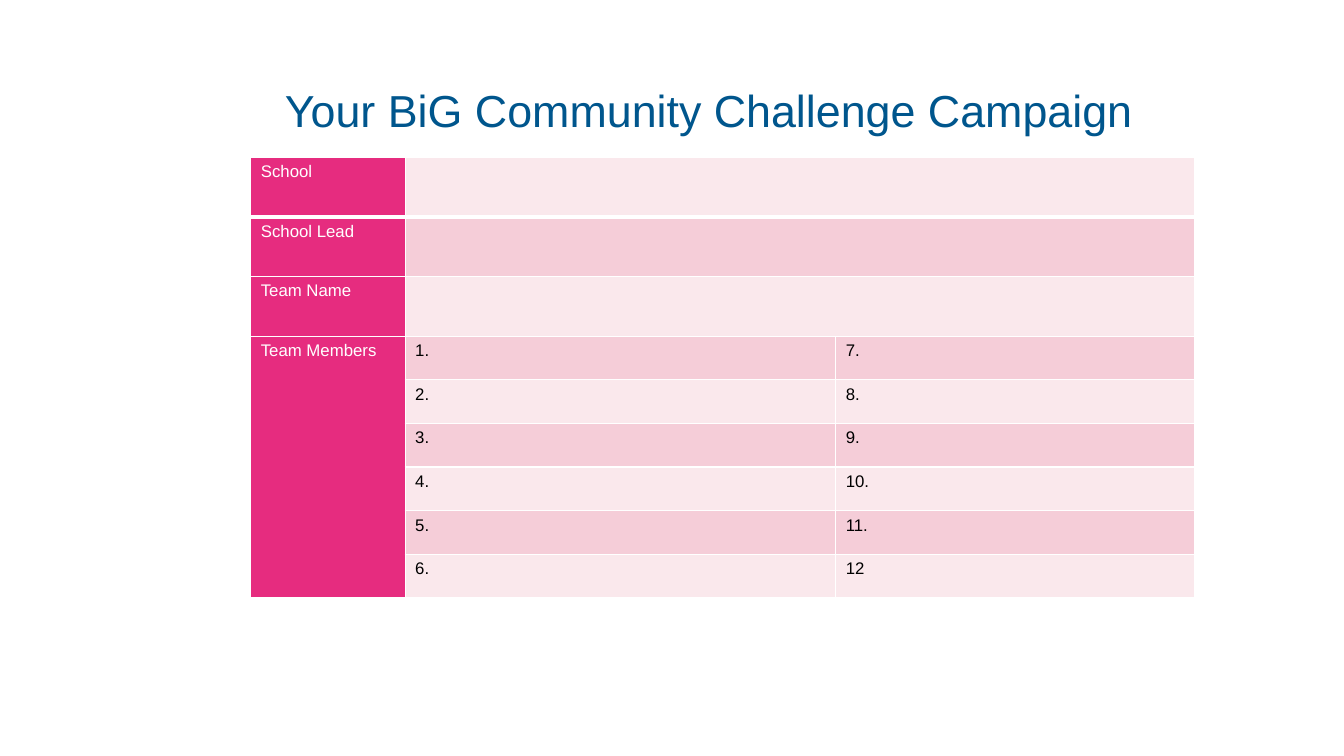
from dataclasses import dataclass

from lxml import etree
from pptx import Presentation
from pptx import util as u
from pptx.dml import color
from pptx.enum import text
from pptx.oxml import ns


@dataclass(frozen=True)
class Theme:
    font: str = "Arial"
    title_size: int = 32
    cell_size: int = 12
    title: str = "00568D"
    label: str = "E62C7F"
    bands: tuple[str, str] = ("FAE8EC", "F5CDD8")
    white: str = "FFFFFF"
    black: str = "000000"
    rule: int = 1
    heavy_rule: int = 3


@dataclass(frozen=True)
class Field:
    """A label with one wide answer cell beside it."""
    label: str


THEME = Theme()
FIELDS = [Field("School"), Field("School Lead"), Field("Team Name")]
MEMBERS_LABEL = "Team Members"
MEMBER_ROWS = 6
COLUMN_WIDTHS = [3.89, 10.85, 9.04]
FIELD_HEIGHT, MEMBER_HEIGHT = 1.5, 1.1


def write(frame, words: str, size: int, ink: str) -> None:
    frame.text = words
    para = frame.paragraphs[0]
    for span in para.runs:
        span.font.name = THEME.font
        span.font.size = u.Pt(size)
        span.font.color.rgb = color.RGBColor.from_string(ink)


def add_border(cell, side: str, width: int) -> None:
    props = cell._tc.get_or_add_tcPr()
    line = etree.SubElement(props, ns.qn(f"a:ln{side}"), w=str(u.Pt(width)))
    fill = etree.SubElement(line, ns.qn("a:solidFill"))
    etree.SubElement(fill, ns.qn("a:srgbClr"), val=THEME.white)


def style_cell(cell, row: int, column: int) -> None:
    # The rule under the first row is heavier than the rest
    heavy = {(0, "B"), (1, "T")}
    for side in "LRTB":
        add_border(cell, side, THEME.heavy_rule if (row, side) in heavy else THEME.rule)
    cell.fill.solid()
    band = THEME.label if column == 0 else THEME.bands[row % 2]
    cell.fill.fore_color.rgb = color.RGBColor.from_string(band)


def add_title(page) -> None:
    box = page.shapes.add_textbox(u.Cm(6.93), u.Cm(1.02), u.Cm(25.76), u.Cm(3.68))
    frame = box.text_frame
    frame.word_wrap = True
    frame.vertical_anchor = text.MSO_ANCHOR.MIDDLE
    write(frame, "Your BiG Community Challenge Campaign", THEME.title_size, THEME.title)
    frame.paragraphs[0].line_spacing = 0.9


def add_form(page) -> None:
    heights = [FIELD_HEIGHT] * len(FIELDS) + [MEMBER_HEIGHT] * MEMBER_ROWS
    table = page.shapes.add_table(
        len(heights), len(COLUMN_WIDTHS), u.Cm(6.32), u.Cm(3.97),
        u.Cm(sum(COLUMN_WIDTHS)), u.Cm(sum(heights))).table
    table.first_row = table.horz_banding = False
    for column, width in zip(table.columns, COLUMN_WIDTHS):
        column.width = u.Cm(width)
    for row, height in enumerate(heights):
        table.rows[row].height = u.Cm(height)
        for column in range(len(COLUMN_WIDTHS)):
            style_cell(table.cell(row, column), row, column)

    # Single-answer rows
    for row, field in enumerate(FIELDS):
        table.cell(row, 1).merge(table.cell(row, 2))
        write(table.cell(row, 0).text_frame, field.label, THEME.cell_size, THEME.white)

    # Team member rows, numbered down each column
    first = len(FIELDS)
    table.cell(first, 0).merge(table.cell(len(heights) - 1, 0))
    write(table.cell(first, 0).text_frame, MEMBERS_LABEL, THEME.cell_size, THEME.white)
    last = 2 * MEMBER_ROWS
    for index in range(last):
        column, row = divmod(index, MEMBER_ROWS)
        number = index + 1
        words = f"{number}." if number < last else f"{number}"
        cell = table.cell(first + row, column + 1)
        write(cell.text_frame, words, THEME.cell_size, THEME.black)


def main() -> None:
    deck = Presentation()
    deck.slide_width, deck.slide_height = u.Cm(33.87), u.Cm(19.05)
    page = deck.slides.add_slide(deck.slide_layouts[6])
    add_title(page)
    add_form(page)
    deck.save("out.pptx")


if __name__ == "__main__":
    main()
